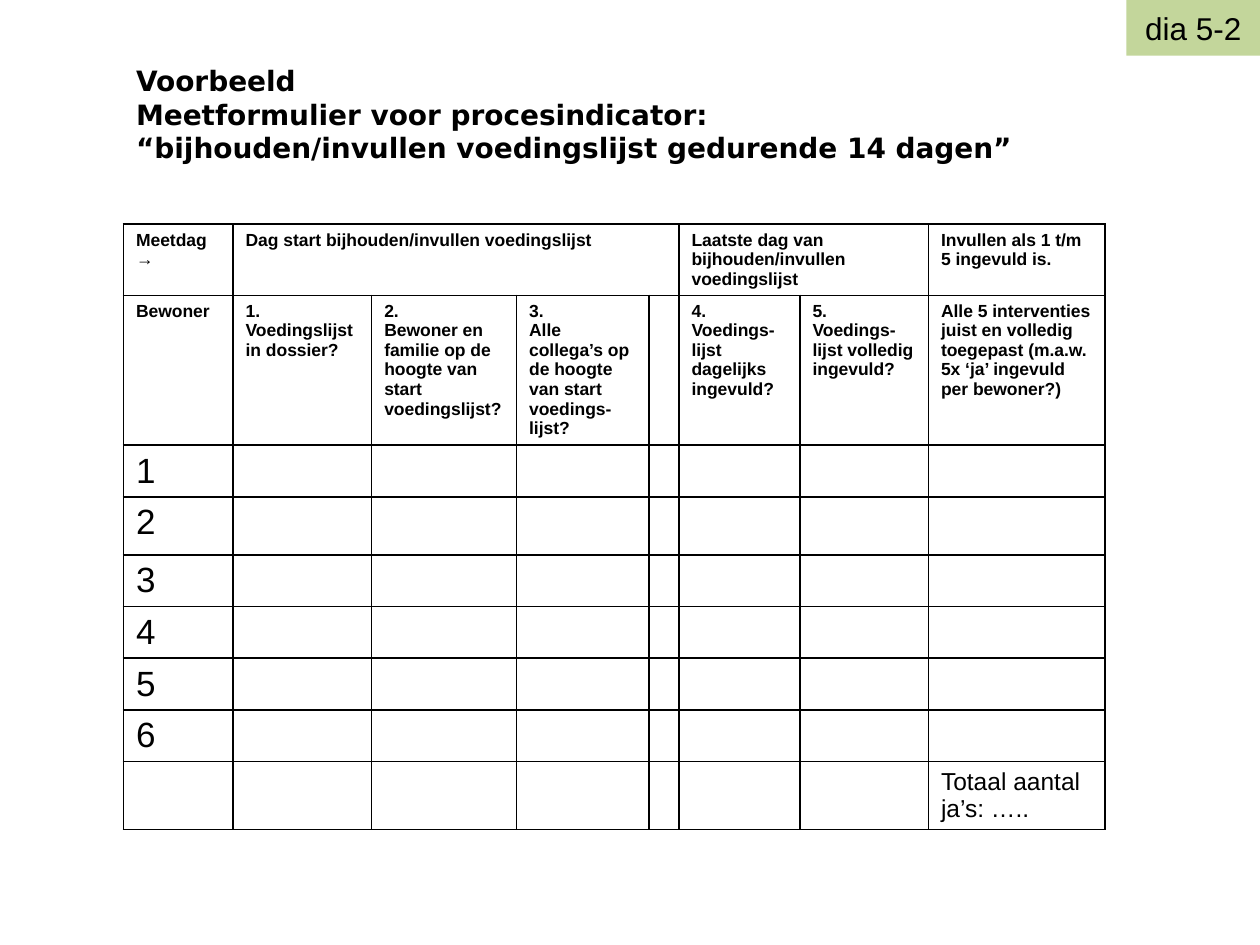
import dataclasses

import pptx
import pptx.dml.color
import pptx.enum.shapes
import pptx.enum.text
import pptx.oxml
import pptx.oxml.ns
import pptx.util

BLACK = pptx.dml.color.RGBColor(0x00, 0x00, 0x00)
GREEN = pptx.dml.color.RGBColor(0xC3, 0xD6, 0x9B)
SLIDE_WIDTH = pptx.util.Inches(10)
SLIDE_HEIGHT = pptx.util.Inches(7.5)
COLUMN_WIDTHS = (0.87, 1.1, 1.15, 1.05, 0.23, 0.96, 1.02, 1.4)
RESIDENTS = range(1, 7)
ROW_HEIGHTS = (0.56, 1.19, 0.41, 0.46, 0.41, 0.41, 0.41, 0.41, 0.54)


@dataclasses.dataclass(frozen=True)
class Area:
    left: float
    top: float
    width: float
    height: float

    def lengths(self) -> tuple[int, int, int, int]:
        return (
            int(self.left * SLIDE_WIDTH),
            int(self.top * SLIDE_HEIGHT),
            int(self.width * SLIDE_WIDTH),
            int(self.height * SLIDE_HEIGHT),
        )


@dataclasses.dataclass(frozen=True)
class Entry:
    row: int
    column: int
    text: str
    size: int = 10
    bold: bool = True
    columns: int = 1


TITLE_AREA = Area(0.098, 0.037, 0.835, 0.167)
TABLE_AREA = Area(0.098, 0.237, 0.777, 0.64)
TAG_AREA = Area(0.894, 0, 0.106, 0.059)

ENTRIES = [
    Entry(0, 0, "Meetdag\n→"),
    Entry(0, 1, "Dag start bijhouden/invullen voedingslijst", columns=4),
    Entry(0, 5, "Laatste dag van bijhouden/invullen voedingslijst", columns=2),
    Entry(0, 7, "Invullen als 1 t/m 5 ingevuld is."),
    Entry(1, 0, "Bewoner"),
    Entry(1, 1, "1.\nVoedingslijst in dossier?"),
    Entry(1, 2, "2.\nBewoner en familie op de hoogte van start voedingslijst?"),
    Entry(1, 3, "3.\nAlle collega’s op de hoogte van start voedings-lijst?"),
    Entry(1, 5, "4.\nVoedings-lijst dagelijks ingevuld?"),
    Entry(1, 6, "5.\nVoedings-lijst volledig ingevuld?"),
    Entry(1, 7, "Alle 5 interventies juist en volledig toegepast "
                "(m.a.w. 5x ‘ja’ ingevuld per bewoner?)"),
    *(Entry(number + 1, 0, str(number), 20, False) for number in RESIDENTS),
    Entry(8, 7, "Totaal aantal ja’s: …..", 14, False),
]


def format_text(frame, name: str, size: int, bold: bool, alignment) -> None:
    for para in frame.paragraphs:
        para.alignment = alignment
        for span in para.runs:
            span.font.name = name
            span.font.size = pptx.util.Pt(size)
            span.font.bold = bold
            span.font.color.rgb = BLACK


def place(box, area: Area) -> None:
    box.left, box.top, box.width, box.height = area.lengths()


def outline_cell(cell) -> None:
    cell.fill.background()
    properties = cell._tc.get_or_add_tcPr()
    for index, side in enumerate(("lnL", "lnR", "lnT", "lnB")):
        border = pptx.oxml.parse_xml(
            f'<a:{side} {pptx.oxml.ns.nsdecls("a")} w="12700">'
            f'<a:solidFill><a:srgbClr val="{BLACK}"/></a:solidFill></a:{side}>'
        )
        properties.insert(index, border)


def add_title(page) -> None:
    title = page.shapes.title
    place(title, TITLE_AREA)
    frame = title.text_frame
    frame.text = ("Voorbeeld\vMeetformulier voor procesindicator: \v"
                  "“bijhouden/invullen voedingslijst gedurende 14 dagen”")
    frame.auto_size = pptx.enum.text.MSO_AUTO_SIZE.NONE
    frame.vertical_anchor = pptx.enum.text.MSO_ANCHOR.MIDDLE
    format_text(frame, "DejaVu Sans", 16, True, pptx.enum.text.PP_ALIGN.LEFT)


def add_form(page) -> None:
    table = page.shapes.add_table(
        len(ROW_HEIGHTS), len(COLUMN_WIDTHS), *TABLE_AREA.lengths()
    ).table
    table.first_row = False
    table.horz_banding = False
    for column, width in zip(table.columns, COLUMN_WIDTHS):
        column.width = pptx.util.Inches(width)
    for row, height in zip(table.rows, ROW_HEIGHTS):
        row.height = pptx.util.Inches(height)
    for cell in table.iter_cells():
        outline_cell(cell)
    for entry in ENTRIES:
        cell = table.cell(entry.row, entry.column)
        if entry.columns > 1:
            cell.merge(table.cell(entry.row, entry.column + entry.columns - 1))
        cell.text_frame.text = entry.text
        format_text(cell.text_frame, "Arial", entry.size, entry.bold,
                    pptx.enum.text.PP_ALIGN.LEFT)


def add_tag(page) -> None:
    tag = page.shapes.add_shape(
        pptx.enum.shapes.MSO_SHAPE.RECTANGLE, *TAG_AREA.lengths()
    )
    tag.shadow.inherit = False
    tag.fill.solid()
    tag.fill.fore_color.rgb = GREEN
    tag.line.fill.background()
    frame = tag.text_frame
    frame.word_wrap = False
    frame.vertical_anchor = pptx.enum.text.MSO_ANCHOR.MIDDLE
    frame.text = "dia 5-2"
    format_text(frame, "Arial", 18, False, pptx.enum.text.PP_ALIGN.CENTER)


def main() -> None:
    deck = pptx.Presentation()
    deck.slide_width = SLIDE_WIDTH
    deck.slide_height = SLIDE_HEIGHT
    page = deck.slides.add_slide(deck.slide_layouts.get_by_name("Title Only"))
    add_title(page)
    add_form(page)
    add_tag(page)
    deck.save("out.pptx")


if __name__ == "__main__":
    main()
